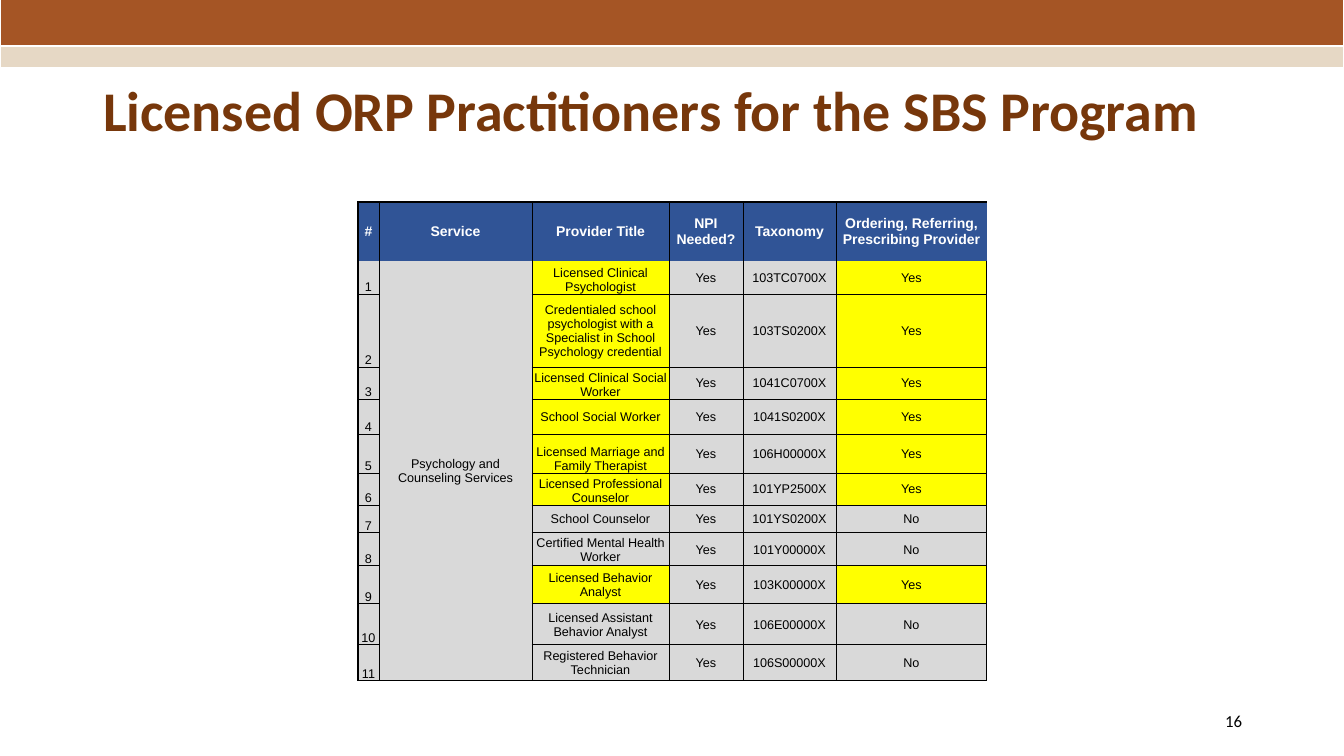
import pptx
import pptx.dml.color
import pptx.enum.shapes
import pptx.enum.text
import pptx.oxml.ns
import pptx.util
from lxml import etree

RGB = pptx.dml.color.RGBColor
ALIGN = pptx.enum.text.PP_ALIGN
ANCHOR = pptx.enum.text.MSO_ANCHOR

RUST = RGB(0xA5, 0x55, 0x25)
SAND = RGB(0xE6, 0xD8, 0xC5)
BROWN = RGB(0x77, 0x37, 0x0B)
BLUE = RGB(0x30, 0x54, 0x96)
GREY = RGB(0xD9, 0xD9, 0xD9)
YELLOW = RGB(0xFF, 0xFF, 0x00)
WHITE = RGB(0xFF, 0xFF, 0xFF)
BLACK = RGB(0x00, 0x00, 0x00)

SLIDE_WIDTH, SLIDE_HEIGHT = 1344, 756
EMU_PER_PX = 12192000 / SLIDE_WIDTH

COLUMN_WIDTHS = [21, 153, 137, 74, 93, 151]
ROW_HEIGHTS = [59, 33, 73, 32, 35, 39, 32, 28, 33, 38, 41, 36]
HEADINGS = ["#", "Service", "Provider Title", "NPI Needed?", "Taxonomy",
            "Ordering, Referring, Prescribing Provider"]
SERVICE = "Psychology and Counseling Services"
# Provider title, taxonomy, may order/refer/prescribe, title anchor
PROVIDERS = [
    ("Licensed Clinical Psychologist", "103TC0700X", "Yes", ANCHOR.BOTTOM),
    ("Credentialed school psychologist with a Specialist in School "
     "Psychology credential", "103TS0200X", "Yes", ANCHOR.MIDDLE),
    ("Licensed Clinical Social Worker", "1041C0700X", "Yes", ANCHOR.BOTTOM),
    ("School Social Worker", "1041S0200X", "Yes", ANCHOR.MIDDLE),
    ("Licensed Marriage and Family Therapist", "106H00000X", "Yes", ANCHOR.BOTTOM),
    ("Licensed Professional Counselor", "101YP2500X", "Yes", ANCHOR.BOTTOM),
    ("School Counselor", "101YS0200X", "No", ANCHOR.MIDDLE),
    ("Certified Mental Health Worker", "101Y00000X", "No", ANCHOR.MIDDLE),
    ("Licensed Behavior Analyst", "103K00000X", "Yes", ANCHOR.MIDDLE),
    ("Licensed Assistant Behavior Analyst", "106E00000X", "No", ANCHOR.MIDDLE),
    ("Registered Behavior Technician", "106S00000X", "No", ANCHOR.MIDDLE),
]


def px(length):
    return pptx.util.Emu(round(length * EMU_PER_PX))


def set_all(target, values):
    for name, value in values.items():
        setattr(target, name, value)


def write(frame, text, size, color, font, bold=False, **para_format):
    para = frame.paragraphs[0]
    set_all(para, para_format)
    span = para.add_run()
    span.text = text
    set_all(span.font, {"size": pptx.util.Pt(size), "name": font, "bold": bold})
    span.font.color.rgb = color


def add_bands(page, left, top, width, height):
    """Two overlapping bands, the sand one showing below the rust one."""
    for offset, color in ((22, SAND), (0, RUST)):
        band = page.shapes.add_shape(
            pptx.enum.shapes.MSO_SHAPE.RECTANGLE,
            px(left), px(top + offset), px(width), px(height))
        band.shadow.inherit = False
        band.fill.solid()
        band.fill.fore_color.rgb = color
        band.line.color.rgb = WHITE
        band.line.width = pptx.util.Pt(1)


def add_title(page, left, top, width, height):
    title = page.shapes.title
    set_all(title, {"left": px(left), "top": px(top),
                    "width": px(width), "height": px(height)})
    set_all(title.text_frame, {"vertical_anchor": ANCHOR.MIDDLE, "word_wrap": True,
                               "auto_size": pptx.enum.text.MSO_AUTO_SIZE.NONE})
    write(title.text_frame, "Licensed ORP Practitioners for the SBS Program",
          40, BROWN, "Calibri", True, alignment=ALIGN.LEFT, line_spacing=0.9)


def add_page_number(page, left, top, width, height):
    box = page.shapes.add_textbox(px(left), px(top), px(width), px(height))
    set_all(box.text_frame, {"vertical_anchor": ANCHOR.MIDDLE, "word_wrap": True})
    write(box.text_frame, "16", 12, BLACK, "Calibri",
          alignment=ALIGN.RIGHT, space_after=pptx.util.Pt(6))


def set_borders(cell, widths):
    """Draw the left, right, top and bottom lines; a width of 0 hides one."""
    properties = cell._tc.get_or_add_tcPr()
    qn = pptx.oxml.ns.qn
    for side, width in zip("LRTB", widths):
        line = etree.SubElement(properties, qn(f"a:ln{side}"),
                                w=str(pptx.util.Pt(width)))
        if width:
            fill = etree.SubElement(line, qn("a:solidFill"))
            etree.SubElement(fill, qn("a:srgbClr"), val=str(BLACK))
        else:
            etree.SubElement(line, qn("a:noFill"))


def format_cell(cell, fill, anchor, borders):
    set_all(cell, {"margin_left": px(1), "margin_right": px(1), "margin_top": px(1),
                   "margin_bottom": 0, "vertical_anchor": anchor})
    set_borders(cell, borders)
    cell.fill.solid()
    cell.fill.fore_color.rgb = fill


def add_provider_table(page, left, top):
    last_row, last_column = len(ROW_HEIGHTS) - 1, len(COLUMN_WIDTHS) - 1
    table = page.shapes.add_table(
        last_row + 1, last_column + 1, px(left), px(top),
        px(sum(COLUMN_WIDTHS)), px(sum(ROW_HEIGHTS))).table
    set_all(table, {"first_row": False, "horz_banding": False})
    for column, width in zip(table.columns, COLUMN_WIDTHS):
        column.width = px(width)
    for row, height in zip(table.rows, ROW_HEIGHTS):
        row.height = px(height)

    # Header row
    for index, heading in enumerate(HEADINGS):
        cell = table.cell(0, index)
        format_cell(cell, BLUE, ANCHOR.MIDDLE,
                    (0.5 if index else 1, 0.5 if index < last_column else 0, 1, 0))
        write(cell.text_frame, heading, 10, WHITE, "Arial", True,
              alignment=ALIGN.CENTER)

    # One row for each provider, with a shared service cell
    table.cell(1, 1).merge(table.cell(last_row, 1))
    for number, (title, taxonomy, orders, anchor) in enumerate(PROVIDERS, 1):
        texts = [str(number), SERVICE if number == 1 else "", title,
                 "Yes", taxonomy, orders]
        mark = YELLOW if orders == "Yes" else GREY
        fills = [GREY, GREY, mark, GREY, GREY, mark]
        anchors = [ANCHOR.BOTTOM, ANCHOR.MIDDLE, anchor] + [ANCHOR.MIDDLE] * 3
        for index, text in enumerate(texts):
            cell = table.cell(number, index)
            inside_service = index == 1
            format_cell(cell, fills[index], anchors[index], (
                0.5 if index else 1,
                0.5 if index < last_column else 1,
                0 if number == 1 or inside_service else 0.5,
                1 if number == last_row else 0 if inside_service and number > 1 else 0.5))
            if text:
                write(cell.text_frame, text, 9, BLACK, "Arial",
                      alignment=ALIGN.CENTER)


def main():
    deck = pptx.Presentation()
    set_all(deck, {"slide_width": px(SLIDE_WIDTH), "slide_height": px(SLIDE_HEIGHT)})
    page = deck.slides.add_slide(deck.slide_layouts[5])
    add_bands(page, 0, -10, SLIDE_WIDTH, 56)
    add_title(page, 93, 40, 1159, 146)
    add_provider_table(page, 358, 202)
    add_page_number(page, 950, 701, 302, 40)
    deck.save("out.pptx")


if __name__ == "__main__":
    main()
